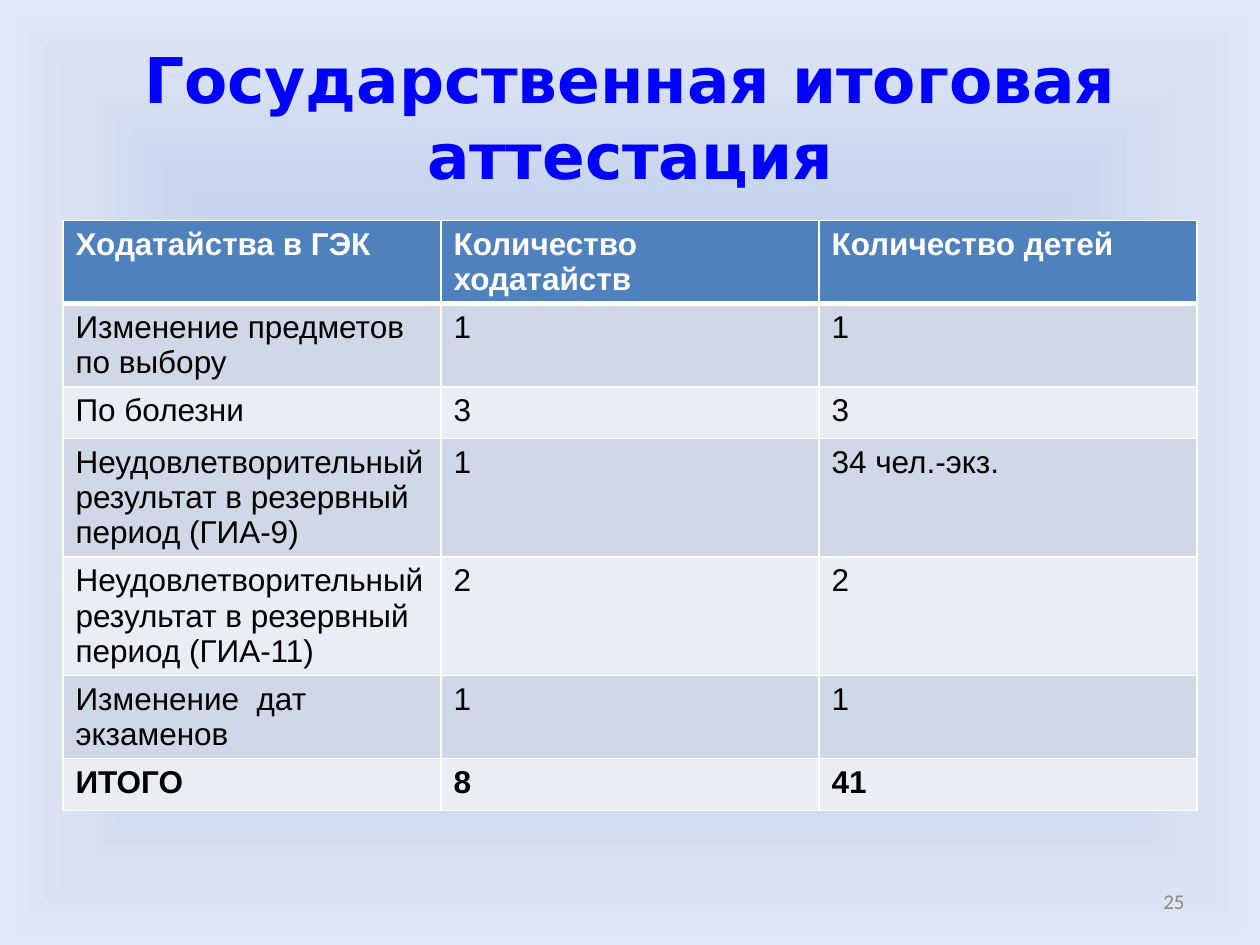
import pptx
import pptx.dml.color
import pptx.enum.text
import pptx.oxml
import pptx.oxml.ns
import pptx.util

Inches = pptx.util.Inches
Pt = pptx.util.Pt
RGBColor = pptx.dml.color.RGBColor
PP_ALIGN = pptx.enum.text.PP_ALIGN
MSO_ANCHOR = pptx.enum.text.MSO_ANCHOR

BLUE = RGBColor(0x00, 0x00, 0xFF)
HEADER = RGBColor(0x4F, 0x81, 0xBD)
BAND_DARK = RGBColor(0xD0, 0xD8, 0xE8)
BAND_LIGHT = RGBColor(0xE9, 0xED, 0xF4)
WHITE = RGBColor(0xFF, 0xFF, 0xFF)
BLACK = RGBColor(0x00, 0x00, 0x00)
GRAY = RGBColor(0x89, 0x89, 0x89)
BACKGROUND_STOPS = [
    (0, RGBColor(0x9A, 0xB5, 0xE4)),
    (50, RGBColor(0xC2, 0xD1, 0xED)),
    (100, RGBColor(0xE1, 0xE8, 0xF5)),
]

PETITIONS = [
    ("Ходатайства в ГЭК", "Количество  ходатайств", "Количество детей"),
    ("Изменение предметов  по выбору", "1", "1"),
    ("По болезни", "3", "3"),
    ("Неудовлетворительный результат в резервный период (ГИА-9)", "1", "34 чел.-экз."),
    ("Неудовлетворительный результат в резервный период (ГИА-11)", "2", "2"),
    ("Изменение  дат экзаменов", "1", "1"),
    ("ИТОГО", "8", "41"),
]


class SlideBuilder:
    """Holds the slide and its common text style."""

    body_font = "Arial"
    body_size = 18
    row_height = 0.41

    def __init__(self, slide):
        self.slide = slide

    def style(self, paragraph, font, size, color, bold=False, align=None):
        paragraph.font.name = font
        paragraph.font.size = Pt(size)
        paragraph.font.color.rgb = color
        paragraph.font.bold = bold
        paragraph.alignment = align

    def background(self, stops):
        """Fill the background with a gradient spreading from the centre."""
        self.slide.background.fill.solid()
        solid = self.slide.element.find(
            ".//p:bgPr/a:solidFill", pptx.oxml.ns._nsmap
        )
        stop_xml = "".join(
            f'<a:gs pos="{pos * 1000}"><a:srgbClr val="{color}"/></a:gs>'
            for pos, color in stops
        )
        gradient = pptx.oxml.parse_xml(
            f'<a:gradFill {pptx.oxml.ns.nsdecls("a")} rotWithShape="1">'
            f'<a:gsLst>{stop_xml}</a:gsLst><a:path path="shape">'
            '<a:fillToRect l="50000" t="50000" r="50000" b="50000"/>'
            "</a:path></a:gradFill>"
        )
        solid.getparent().replace(solid, gradient)

    def title(self, text, left, top, width, height):
        title = self.slide.shapes.title
        title.left, title.top = Inches(left), Inches(top)
        title.width, title.height = Inches(width), Inches(height)
        title.text_frame.text = text
        title.text_frame.vertical_anchor = MSO_ANCHOR.MIDDLE
        self.style(title.text_frame.paragraphs[0], "DejaVu Sans", 36, BLUE,
                   True, PP_ALIGN.CENTER)

    def table(self, rows, left, top, width, height):
        frame = self.slide.shapes.add_table(
            len(rows), len(rows[0]),
            Inches(left), Inches(top), Inches(width), Inches(height),
        )
        last = len(rows) - 1
        for r, texts in enumerate(rows):
            frame.table.rows[r].height = Inches(self.row_height)
            fill = HEADER if r == 0 else BAND_DARK if r % 2 else BAND_LIGHT
            for c, text in enumerate(texts):
                cell = frame.table.cell(r, c)
                cell.text = text
                cell.fill.solid()
                cell.fill.fore_color.rgb = fill
                self.style(cell.text_frame.paragraphs[0], self.body_font,
                           self.body_size, WHITE if r == 0 else BLACK,
                           r in (0, last))
                self.borders(cell, top=3 if r == 1 else 1,
                             bottom=3 if r == 0 else 1)
        # Rows grow with their text, so the frame is taller than their minimum.
        frame.height = Inches(height)

    def borders(self, cell, top, bottom):
        properties = cell._tc.get_or_add_tcPr()
        widths = {"lnL": 1, "lnR": 1, "lnT": top, "lnB": bottom}
        for position, (side, points) in enumerate(widths.items()):
            properties.insert(position, pptx.oxml.parse_xml(
                f'<a:{side} {pptx.oxml.ns.nsdecls("a")} w="{Pt(points)}">'
                f'<a:solidFill><a:srgbClr val="{WHITE}"/></a:solidFill>'
                f"</a:{side}>"
            ))

    def page_number(self, number, left, top, width, height):
        box = self.slide.shapes.add_textbox(
            Inches(left), Inches(top), Inches(width), Inches(height)
        )
        box.text_frame.word_wrap = True
        box.text_frame.vertical_anchor = MSO_ANCHOR.MIDDLE
        box.text_frame.text = number
        self.style(box.text_frame.paragraphs[0], "Calibri", 12, GRAY,
                   align=PP_ALIGN.RIGHT)


def main():
    deck = pptx.Presentation()
    deck.slide_width, deck.slide_height = Inches(10), Inches(7.5)
    builder = SlideBuilder(deck.slides.add_slide(deck.slide_layouts[5]))
    builder.background(BACKGROUND_STOPS)
    builder.title("Государственная итоговая аттестация", 0.5, 0.3, 9, 1.25)
    builder.table(PETITIONS, 0.5, 1.75, 9, 4.62)
    builder.page_number("25", 7.17, 6.95, 2.33, 0.4)
    deck.save("out.pptx")


if __name__ == "__main__":
    main()
